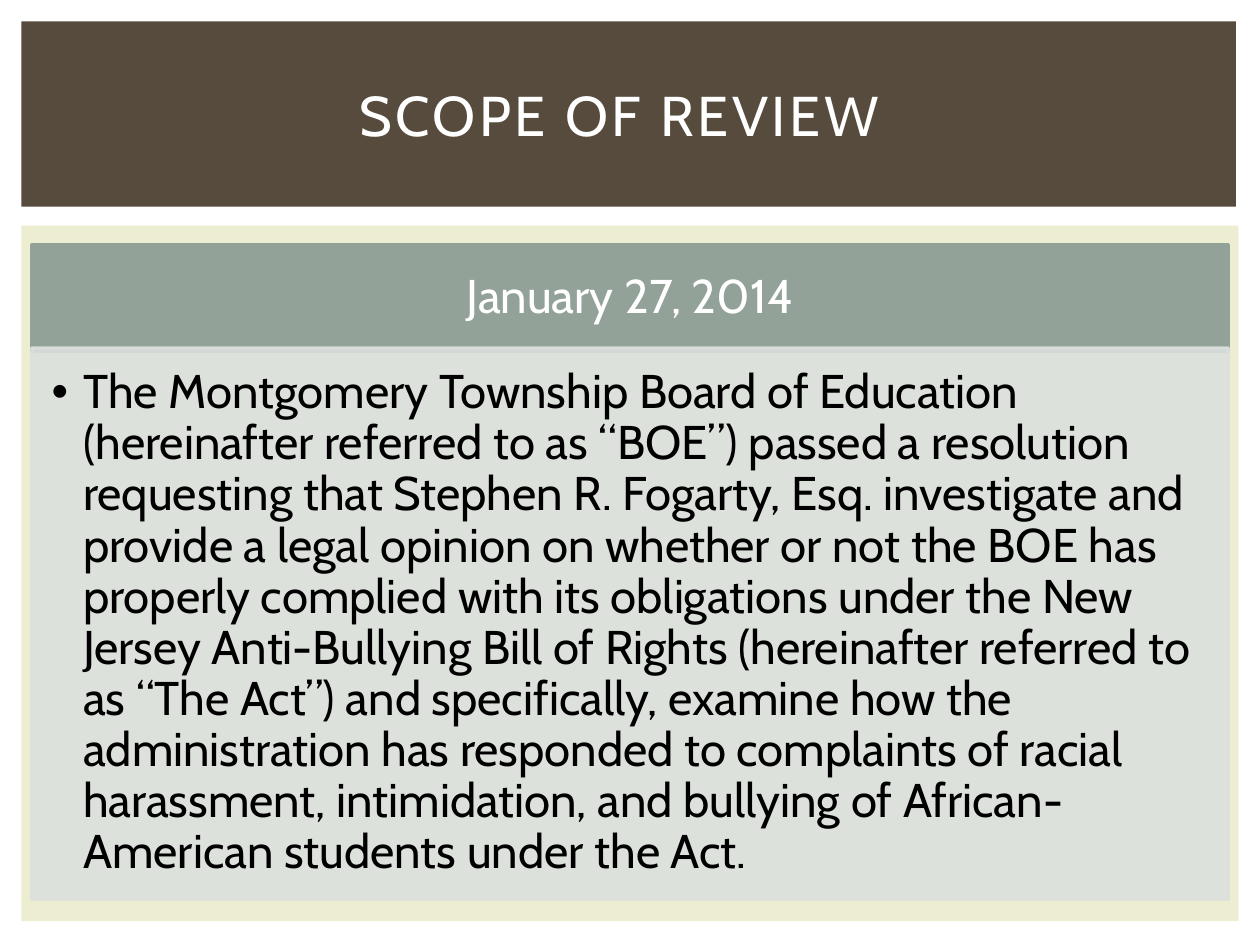
"""Build the Scope of Review slide."""
import pptx
import pptx.util
import pptx.dml.color
import pptx.enum.shapes
import pptx.enum.text
import pptx.oxml.ns
import lxml.etree

Inches, Pt = pptx.util.Inches, pptx.util.Pt
qn = pptx.oxml.ns.qn
COLOURS = {"cream": "ECEDD1", "brown": "564B3C", "sage": "93A299",
           "mist": "DCE0DE", "white": "FFFFFF", "black": "000000"}
RESOLUTION = (
    "The Montgomery Township Board of Education (hereinafter referred to as “BOE”) "
    "passed a resolution requesting that Stephen R. Fogarty, Esq. investigate and "
    "provide a legal opinion on whether or not the BOE has properly complied with its "
    "obligations under the New Jersey Anti-Bullying Bill of Rights (hereinafter "
    "referred to as “The Act”) and specifically, examine how the administration has "
    "responded to complaints of racial harassment, intimidation, and bullying of "
    "African-American students under the Act.")


def paint(shape, fill, line=None):
    shape.fill.solid()
    shape.fill.fore_color.rgb = pptx.dml.color.RGBColor.from_string(COLOURS[fill])
    if line:
        shape.line.color.rgb = pptx.dml.color.RGBColor.from_string(COLOURS[line])
        shape.line.width = Pt(1.5)
    else:
        shape.line.fill.background()


def write(shape, text, size, colour, align, margins, anchor):
    frame = shape.text_frame
    frame.text = text
    frame.word_wrap = True
    frame.auto_size = pptx.enum.text.MSO_AUTO_SIZE.NONE
    frame.vertical_anchor = anchor
    (frame.margin_left, frame.margin_top,
     frame.margin_right, frame.margin_bottom) = map(Inches, margins)
    para = frame.paragraphs[0]
    para.alignment = align
    para.space_before = Pt(0)
    para.font.size = Pt(size)
    para.font.name = "Cabin"
    para.font.color.rgb = pptx.dml.color.RGBColor.from_string(COLOURS[colour])
    return para


deck = pptx.Presentation()
deck.slide_width, deck.slide_height = Inches(10), Inches(7.5)
page = deck.slides.add_slide(deck.slide_layouts[1])
title, body = page.shapes.title, page.placeholders[1]
align, anchor = pptx.enum.text.PP_ALIGN, pptx.enum.text.MSO_ANCHOR

panels = []
for fill, line, place in (("cream", None, (0.17, 1.79, 9.66, 5.52)),
                          ("brown", None, (0.17, 0.17, 9.64, 1.47)),
                          ("sage", "sage", (0.25, 1.94, 9.5, 0.85))):
    panel = page.shapes.add_shape(
        pptx.enum.shapes.MSO_SHAPE.RECTANGLE, *map(Inches, place))
    panel.shadow.inherit = False
    paint(panel, fill, line)
    panels.append(panel)
backdrop, title_band, date_band = panels

for holder, place in ((body, (0.25, 2.76, 9.5, 4.38)),
                      (title, (0.33, 0.33, 9.17, 1.15))):
    holder.left, holder.top, holder.width, holder.height = map(Inches, place)
    page.shapes._spTree.append(holder._element)

date = write(date_band, "January 27, 2014", 27, "white", align.CENTER,
             (0.21, 0.12, 0.21, 0.12), anchor.MIDDLE)
date.line_spacing = 0.9

heading = write(title, "SCOPE OF REVIEW", 32, "white", align.CENTER,
                (0.1, 0.05, 0.1, 0.05), anchor.MIDDLE)
heading.runs[0].font._element.set("spc", "200")

paint(body, "mist", "mist")
for colour in body._element.spPr.iter(qn("a:srgbClr")):
    lxml.etree.SubElement(colour, qn("a:alpha"), val="90000")
item = write(body, RESOLUTION, 27, "black", align.LEFT,
             (0.16, 0.16, 0.21, 0.24), anchor.TOP)
item.line_spacing = 0.9
properties = item._element.get_or_add_pPr()
properties.set("marL", str(Inches(0.25)))
properties.set("indent", str(Inches(-0.25)))
bullet = lxml.etree.Element(qn("a:buChar"), char="•")
properties.find(qn("a:defRPr")).addprevious(bullet)

deck.save("out.pptx")
